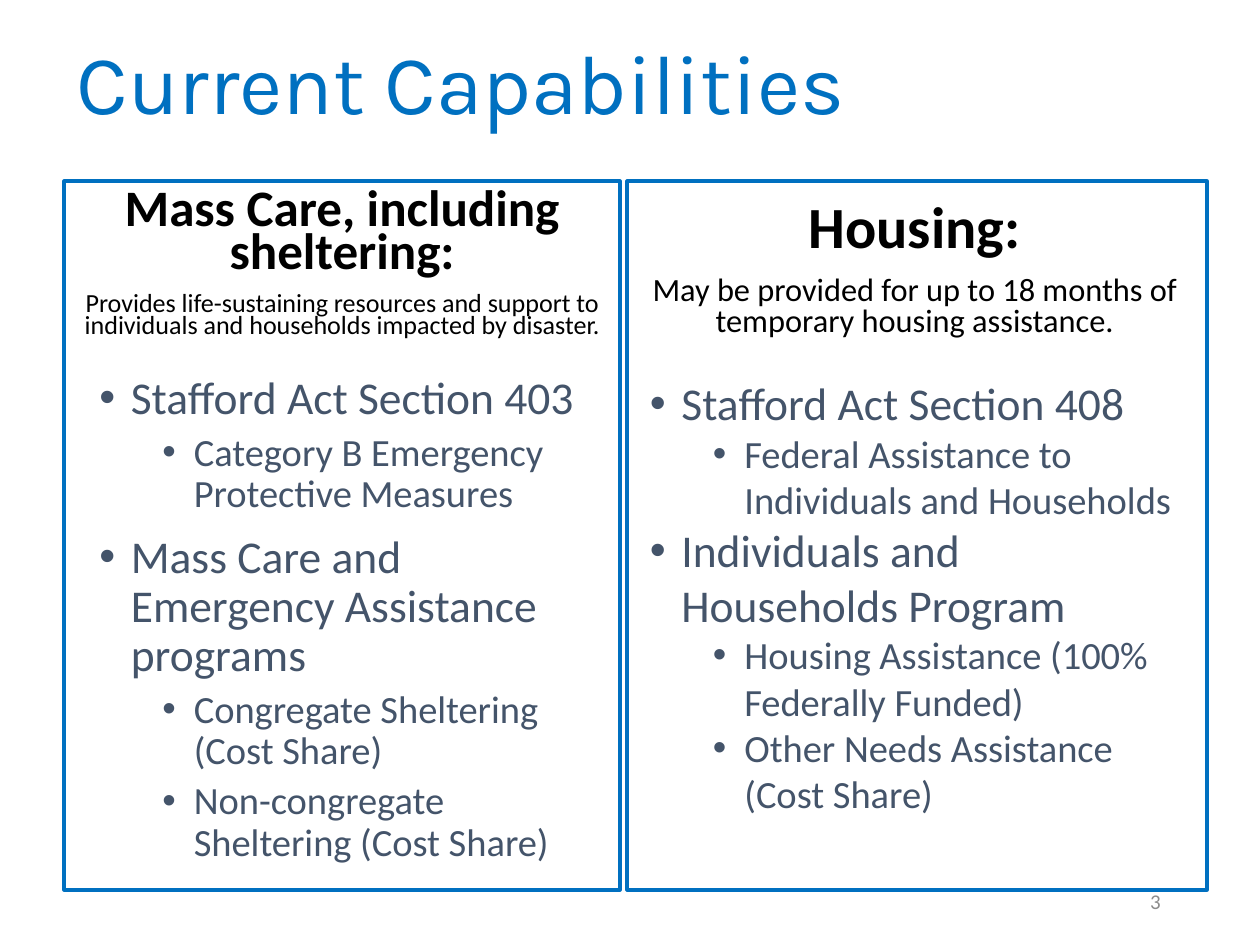
import pptx
import pptx.util
import pptx.dml.color
import pptx.enum.shapes
import pptx.enum.text
import lxml.etree
from pptx.oxml.ns import qn

Inches = pptx.util.Inches
Pt = pptx.util.Pt
ALIGN = pptx.enum.text.PP_ALIGN
ANCHOR = pptx.enum.text.MSO_ANCHOR

COLORS = {"blue": "0070C0", "black": "000000", "slate": "44546A", "gray": "8C8C8C"}
TOP, HEADING_HEIGHT, LIST_TOP, FRAME_HEIGHT = 1.44, 1.3, 2.93, 5.62
LEVEL_SIZES = (26, 22)
LEVEL_INDENTS = (0.25, 0.75)

COLUMNS = [
    {
        "frame": (0.51, 4.41), "heading": (0.51, 4.41), "list": (0.69, 4.23, 4.03),
        "heading_spacing": 0.7, "list_spacing": 0.9, "space_before": (10, 5),
        "title": ("Mass Care, including sltering:".replace("sltering", "sheltering"), 29.2),
        "summary": ("Provides life-sustaining resources and support to individuals "
                    "and households impacted by disaster.", 14.9),
        "items": [
            (0, "Stafford Act Section 403"),
            (1, "Category B Emergency Protective Measures"),
            (0, "Mass Care and Emergency Assistance programs"),
            (1, "Congregate Sheltering (Cost Share)"),
            (1, "Non-congregate Sheltering (Cost Share)"),
        ],
    },
    {
        "frame": (4.98, 4.6), "heading": (5.06, 4.4), "list": (5.06, 4.4, 4.13),
        "heading_spacing": 0.8, "list_spacing": 1.0, "space_before": (0, 0),
        "title": ("Housing:", 33.3),
        "summary": ("May be provided for up to 18 months of temporary housing assistance.", 18.5),
        "items": [
            (0, "Stafford Act Section 408"),
            (1, "Federal Assistance to Individuals and Households"),
            (0, "Individuals and Households Program"),
            (1, "Housing Assistance (100% Federally Funded)"),
            (1, "Other Needs Assistance (Cost Share)"),
        ],
    },
]


def rgb(name):
    return pptx.dml.color.RGBColor.from_string(COLORS[name])


def add_box(page, left, top, width, height, anchor=ANCHOR.TOP):
    box = page.shapes.add_textbox(*map(Inches, (left, top, width, height)))
    frame = box.text_frame
    frame.word_wrap = True
    frame.vertical_anchor = anchor
    return frame


def add_para(frame, text, size, color, font="Calibri", bold=False,
             align=ALIGN.LEFT, spacing=1.0, before=0):
    first = frame.paragraphs[0]
    para = frame.add_paragraph() if first.runs else first
    para.alignment = align
    para.line_spacing = spacing
    para.space_before = Pt(before)
    span = para.add_run()
    span.text = text
    span.font.name = font
    span.font.size = Pt(size)
    span.font.bold = bold
    span.font.color.rgb = rgb(color)
    return para


def add_bullet(para, level):
    para.level = level
    properties = para._p.get_or_add_pPr()
    properties.set("marL", str(Inches(LEVEL_INDENTS[level])))
    properties.set("indent", str(Inches(-0.25)))
    lxml.etree.SubElement(properties, qn("a:buFont")).set("typeface", "Arial")
    lxml.etree.SubElement(properties, qn("a:buChar")).set("char", "•")


def add_column(page, column):
    left, width = column["heading"]
    heading = add_box(page, left, TOP, width, HEADING_HEIGHT, ANCHOR.BOTTOM)
    for key, bold in (("title", True), ("summary", False)):
        text, size = column[key]
        add_para(heading, text, size, "black", bold=bold, align=ALIGN.CENTER,
                 spacing=column["heading_spacing"], before=10)

    left, width, height = column["list"]
    listing = add_box(page, left, LIST_TOP, width, height)
    for level, text in column["items"]:
        para = add_para(listing, text, LEVEL_SIZES[level], "slate",
                        spacing=column["list_spacing"],
                        before=column["space_before"][level])
        add_bullet(para, level)


def add_frame(page, left, width):
    outline = page.shapes.add_shape(
        pptx.enum.shapes.MSO_SHAPE.RECTANGLE,
        *map(Inches, (left, TOP, width, FRAME_HEIGHT)))
    outline.shadow.inherit = False
    outline.fill.background()
    outline.line.color.rgb = rgb("blue")
    outline.line.width = Pt(2.25)


def main():
    deck = pptx.Presentation()
    deck.slide_width, deck.slide_height = Inches(10), Inches(7.5)
    page = deck.slides.add_slide(deck.slide_layouts[6])

    title = add_box(page, 0.51, 0.24, 8.62, 0.91, ANCHOR.MIDDLE)
    add_para(title, "Current Capabilities", 48, "blue", font="Karla", spacing=0.9)
    for column in COLUMNS:
        add_column(page, column)
    number = add_box(page, 7.06, 6.95, 2.25, 0.4, ANCHOR.MIDDLE)
    add_para(number, "3", 12, "gray", align=ALIGN.RIGHT)
    for column in COLUMNS:
        add_frame(page, *column["frame"])

    deck.save("out.pptx")


if __name__ == "__main__":
    main()
